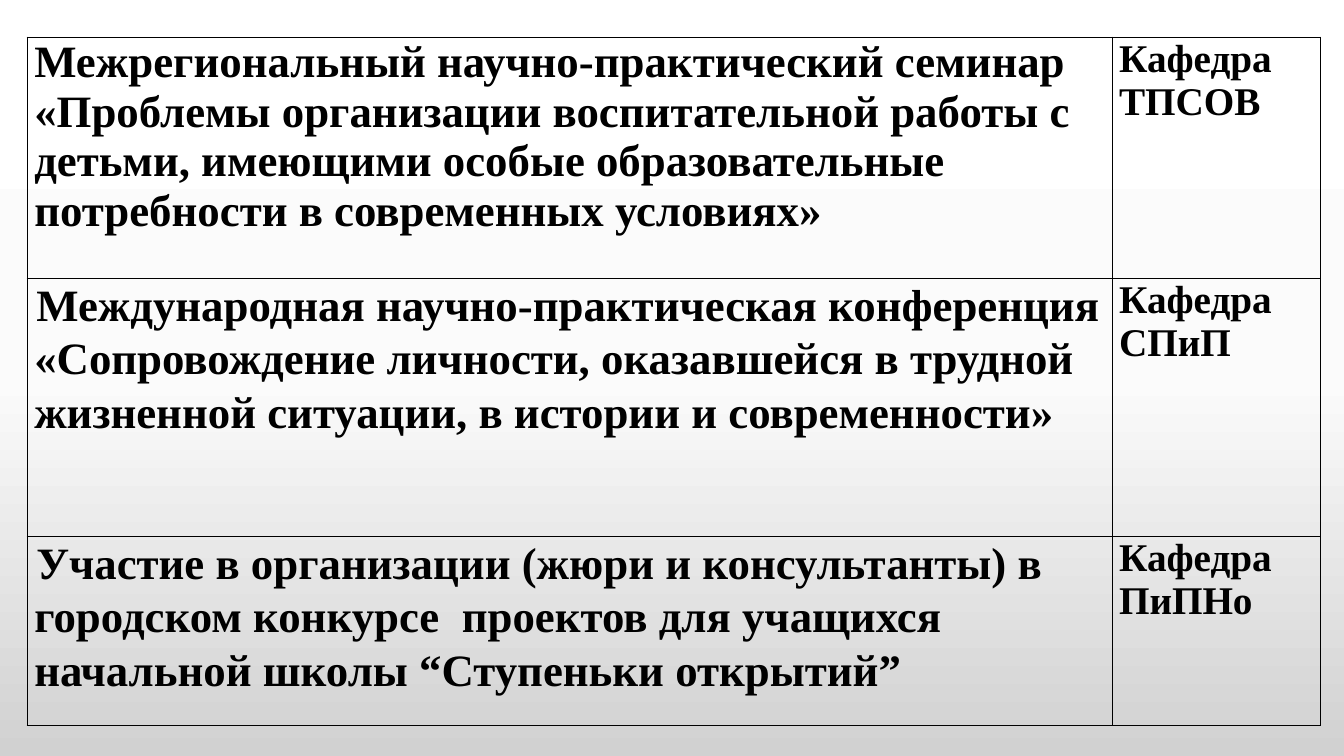
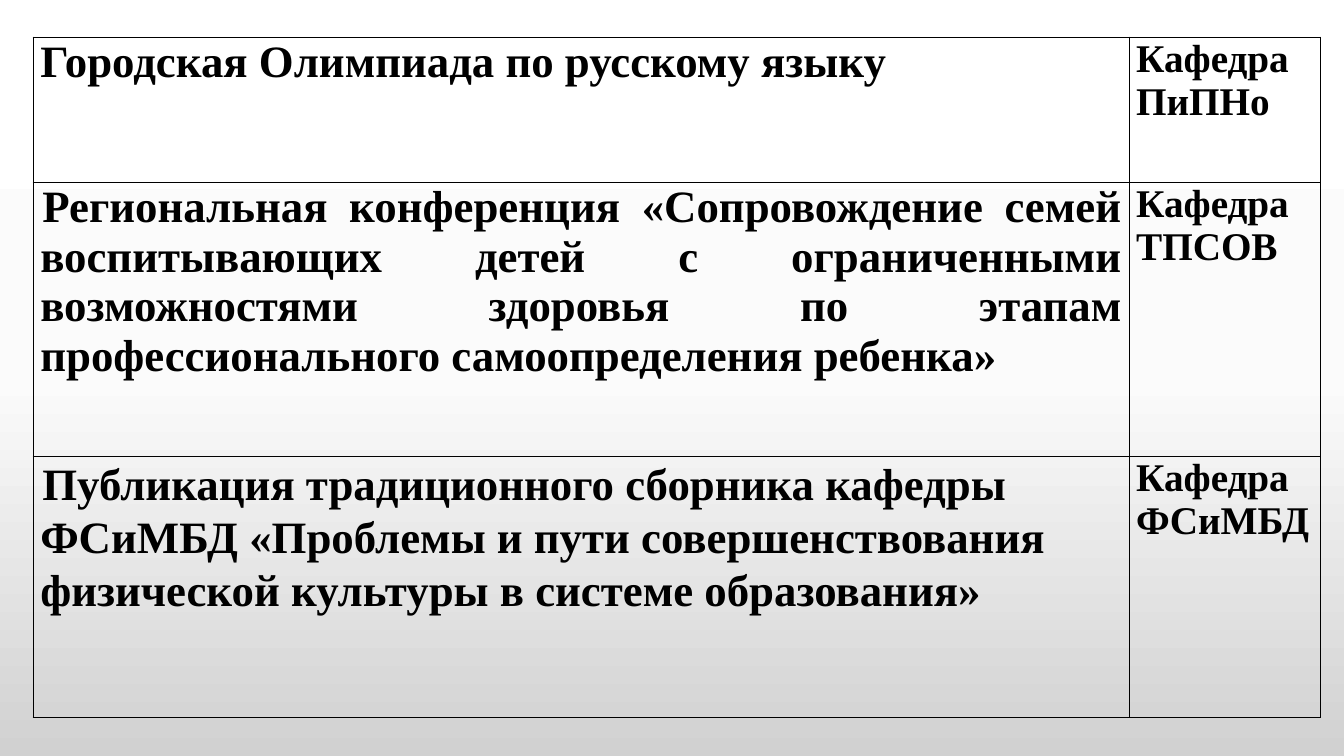
import pptx
import pptx.util
import pptx.oxml
import pptx.oxml.ns
import pptx.dml.color
import pptx.enum.text
import copy

Inches = pptx.util.Inches
Pt = pptx.util.Pt
RGB = pptx.dml.color.RGBColor.from_string
ALIGN = pptx.enum.text.PP_ALIGN
HUES = {"ink": "000000", "top": "FFFFFF", "mid": "FBFBFB", "low": "D1D1D1"}
FONT = {"name": "Times New Roman", "bold": True}
EDGE = {"margin_left": Inches(0.07), "margin_right": Inches(0.07),
        "margin_top": 0, "margin_bottom": 0}
PLAIN = {"size": 32, "align": ALIGN.LEFT, "indent": 0, "space": 1}
FIRST = {**PLAIN, "indent": 0.02, "space": 1.07}
JUST = {**PLAIN, "align": ALIGN.JUSTIFY, "indent": 0.02}
CHAIR = {**PLAIN, "size": 28, "align": ALIGN.JUSTIFY}

PAGES = [
    {"left": 0.27, "cols": [10.76, 2.07], "rows": [
        (2.39, "Межрегиональный научно-практический семинар «Проблемы организации "
               "воспитательной работы с детьми, имеющими особые образовательные "
               "потребности в современных условиях»", PLAIN, "Кафедра ТПСОВ"),
        (2.56, "Международная научно-практическая конференция «Сопровождение личности, "
               "оказавшейся в трудной жизненной ситуации, в истории и современности»",
         FIRST, "Кафедра СПиП"),
        (1.88, "Участие в организации (жюри и консультанты) в городском конкурсе  проектов "
               "для учащихся начальной школы “Ступеньки открытий”",
         FIRST, "Кафедра ПиПНо"),
    ]},
    {"left": 0.33, "cols": [10.87, 1.9], "rows": [
        (1.44, "Городская Олимпиада по русскому языку", PLAIN, "Кафедра ПиПНо"),
        (2.72, "Региональная конференция «Сопровождение семей воспитывающих детей с "
               "ограниченными возможностями здоровья по этапам профессионального "
               "самоопределения ребенка»", JUST, "Кафедра ТПСОВ"),
        (2.59, "Публикация традиционного сборника кафедры ФСиМБД «Проблемы и пути "
               "совершенствования физической культуры в системе образования»",
         FIRST, "Кафедра ФСиМБД"),
    ]},
]


def border(cell):
    props = cell._tc.get_or_add_tcPr()
    for spot, side in enumerate(("lnL", "lnR", "lnT", "lnB")):
        props.insert(spot, pptx.oxml.parse_xml(
            f'<a:{side} {pptx.oxml.ns.nsdecls("a")} w="{Pt(1)}"><a:solidFill>'
            f'<a:srgbClr val="{HUES["ink"]}"/></a:solidFill></a:{side}>'))


def write(cell, text, style):
    cell.fill.background()
    border(cell)
    for key, value in EDGE.items():
        setattr(cell, key, value)
    cell.text = text
    para = cell.text_frame.paragraphs[0]
    para.alignment = style["align"]
    para.line_spacing = style["space"]
    para._p.get_or_add_pPr().set("indent", str(Inches(style["indent"])))
    font = para.runs[0].font
    for key, value in FONT.items():
        setattr(font, key, value)
    font.size = Pt(style["size"])
    font.color.rgb = RGB(HUES["ink"])


deck = pptx.Presentation()
deck.slide_width = Inches(13.33)
deck.slide_height = Inches(7.5)

master = deck.slide_master
fill = master.background.fill
fill.gradient()
fill.gradient_angle = 270
stops = master.element.xpath("./p:cSld/p:bg//a:gsLst")[0]
stops.insert(1, copy.deepcopy(stops[0]))
for stop, hue, place in zip(fill.gradient_stops, ("top", "mid", "low"), (0, 0.5, 1)):
    stop.color.rgb = RGB(HUES[hue])
    stop.position = place

for page in PAGES:
    slide = deck.slides.add_slide(deck.slide_layouts[6])
    cols, rows = page["cols"], page["rows"]
    table = slide.shapes.add_table(
        len(rows), len(cols), Inches(page["left"]), Inches(0.37),
        Inches(sum(cols)), Inches(sum(row[0] for row in rows))).table
    table.first_row = table.horz_banding = False
    for col, width in zip(table.columns, cols):
        col.width = Inches(width)
    for line, (height, event, style, chair) in zip(table.rows, rows):
        line.height = Inches(height)
        write(line.cells[0], event, style)
        write(line.cells[1], chair, CHAIR)

deck.save("out.pptx")
